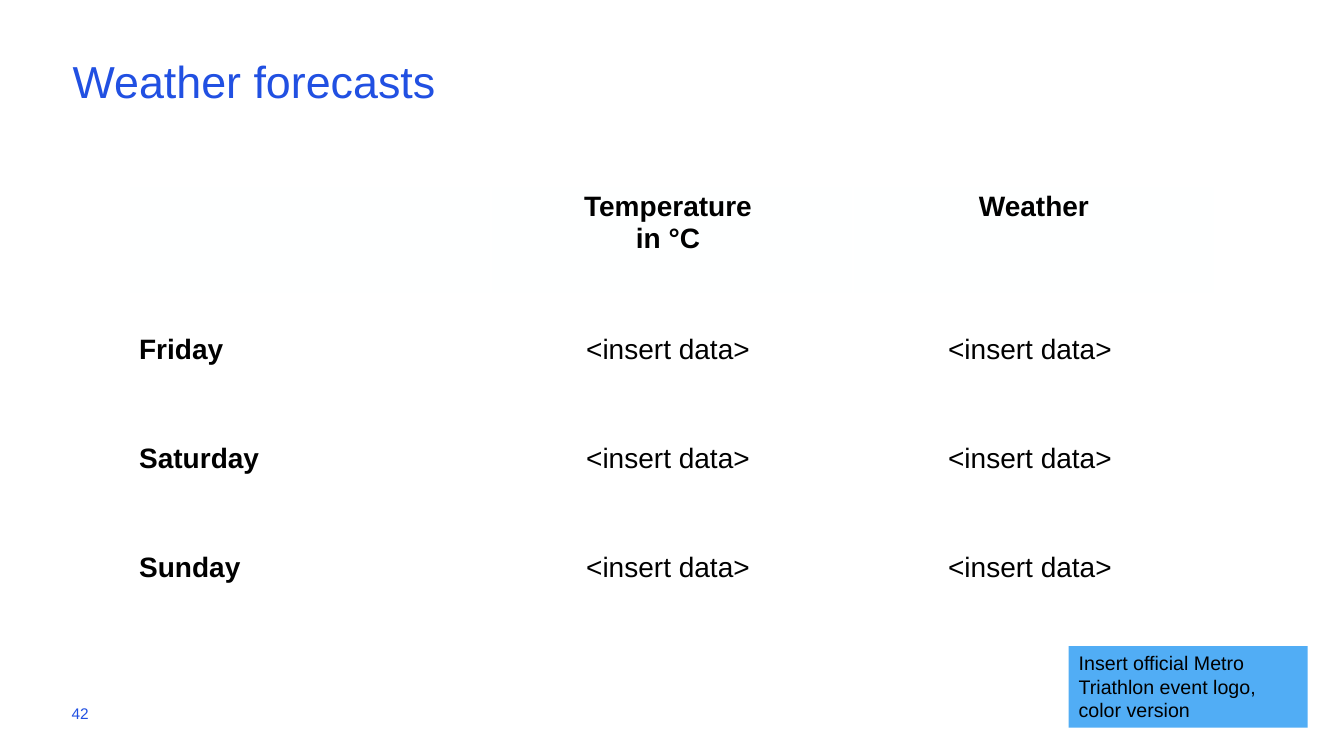
from lxml import etree
from pptx import Presentation
from pptx.dml.color import RGBColor
from pptx.enum.shapes import MSO_SHAPE
from pptx.enum.text import MSO_ANCHOR, PP_ALIGN
from pptx.oxml.ns import qn
from pptx.util import Inches, Pt

RECTANGLE = MSO_SHAPE.RECTANGLE
TOP, MIDDLE = MSO_ANCHOR.TOP, MSO_ANCHOR.MIDDLE
LEFT, CENTER = PP_ALIGN.LEFT, PP_ALIGN.CENTER

BLUE, SKY, BLACK, WHITE, HEADER_WHITE = "2150E2", "51ADF5", "000000", "FFFFFF", "FEFFFF"
COLUMN_WIDTH, ROW_HEIGHT = 3.59, 1.08
FORECASTS = [
    ["", "Temperature \vin °C ", "Weather"],
    *[[day, "<insert data> ", "<insert data> "] for day in ("Friday", "Saturday", "Sunday")],
]


def color(value):
    return RGBColor.from_string(value)


def fill_solid(target, value):
    target.fill.solid()
    target.fill.fore_color.rgb = color(value)


def write_text(frame, lines, size, text_color, bold=False, align=LEFT, spacing=1.0):
    for index, line in enumerate(lines):
        paragraph = frame.add_paragraph() if index else frame.paragraphs[0]
        paragraph.text = line
        paragraph.alignment = align
        paragraph.line_spacing = spacing
        for run in paragraph.runs:
            formats = {"name": "Arial", "size": Pt(size), "bold": bold}
            for name, value in formats.items():
                setattr(run.font, name, value)
            run.font.color.rgb = color(text_color)


def set_frame(frame, anchor, left_margin):
    formats = {
        "word_wrap": True,
        "vertical_anchor": anchor,
        "margin_left": Inches(left_margin),
        "margin_right": Inches(0.1),
        "margin_top": Inches(0.05),
        "margin_bottom": Inches(0.05),
    }
    for name, value in formats.items():
        setattr(frame, name, value)


def add_label(slide, box, text, size, spacing=1.0):
    label = slide.shapes.add_textbox(*map(Inches, box))
    set_frame(label.text_frame, MIDDLE, 0)
    write_text(label.text_frame, [text], size, BLUE, spacing=spacing)


def add_note(slide, box, lines):
    shape = slide.shapes.add_shape(RECTANGLE, *map(Inches, box))
    shape.shadow.inherit = False
    shape.line.fill.background()
    fill_solid(shape, SKY)
    set_frame(shape.text_frame, TOP, 0.1)
    write_text(shape.text_frame, lines, 14, BLACK)


def set_borders(cell, bottom_width):
    properties = cell._tc.get_or_add_tcPr()
    widths = {"a:lnL": 1, "a:lnR": 1, "a:lnT": 1, "a:lnB": bottom_width}
    for position, (tag, width) in enumerate(widths.items()):
        line = etree.Element(qn(tag), w=str(Pt(width)))
        solid = etree.SubElement(line, qn("a:solidFill"))
        etree.SubElement(solid, qn("a:srgbClr"), val=WHITE)
        properties.insert(position, line)


def add_forecast_table(slide, left, top, rows):
    row_count, column_count = len(rows), len(rows[0])
    table = slide.shapes.add_table(
        row_count, column_count, Inches(left), Inches(top),
        Inches(column_count * COLUMN_WIDTH), Inches(row_count * ROW_HEIGHT),
    ).table
    for row_index, row in enumerate(rows):
        is_header = row_index == 0
        for column_index, text in enumerate(row):
            is_day = column_index == 0
            cell = table.cell(row_index, column_index)
            cell.vertical_anchor = TOP if is_header else MIDDLE
            fill_solid(cell, HEADER_WHITE if is_header else WHITE)
            set_borders(cell, 3 if is_header else 1)
            write_text(cell.text_frame, [text], 20, BLACK,
                       bold=is_header or is_day, align=LEFT if is_day else CENTER)


def main():
    presentation = Presentation()
    presentation.slide_width = Inches(13.33)
    presentation.slide_height = Inches(7.5)
    slide = presentation.slides.add_slide(presentation.slide_layouts[6])
    add_label(slide, (0.72, 0.26, 11.5, 1.14), "Weather forecasts", 32, spacing=0.9)
    add_label(slide, (0.71, 6.88, 3, 0.4), "42", 11)
    add_forecast_table(slide, 1.28, 1.85, FORECASTS)
    add_note(slide, (10.6, 6.41, 2.37, 0.81),
             ["Insert official Metro Triathlon event logo,", "color version"])
    presentation.save("out.pptx")


if __name__ == "__main__":
    main()
